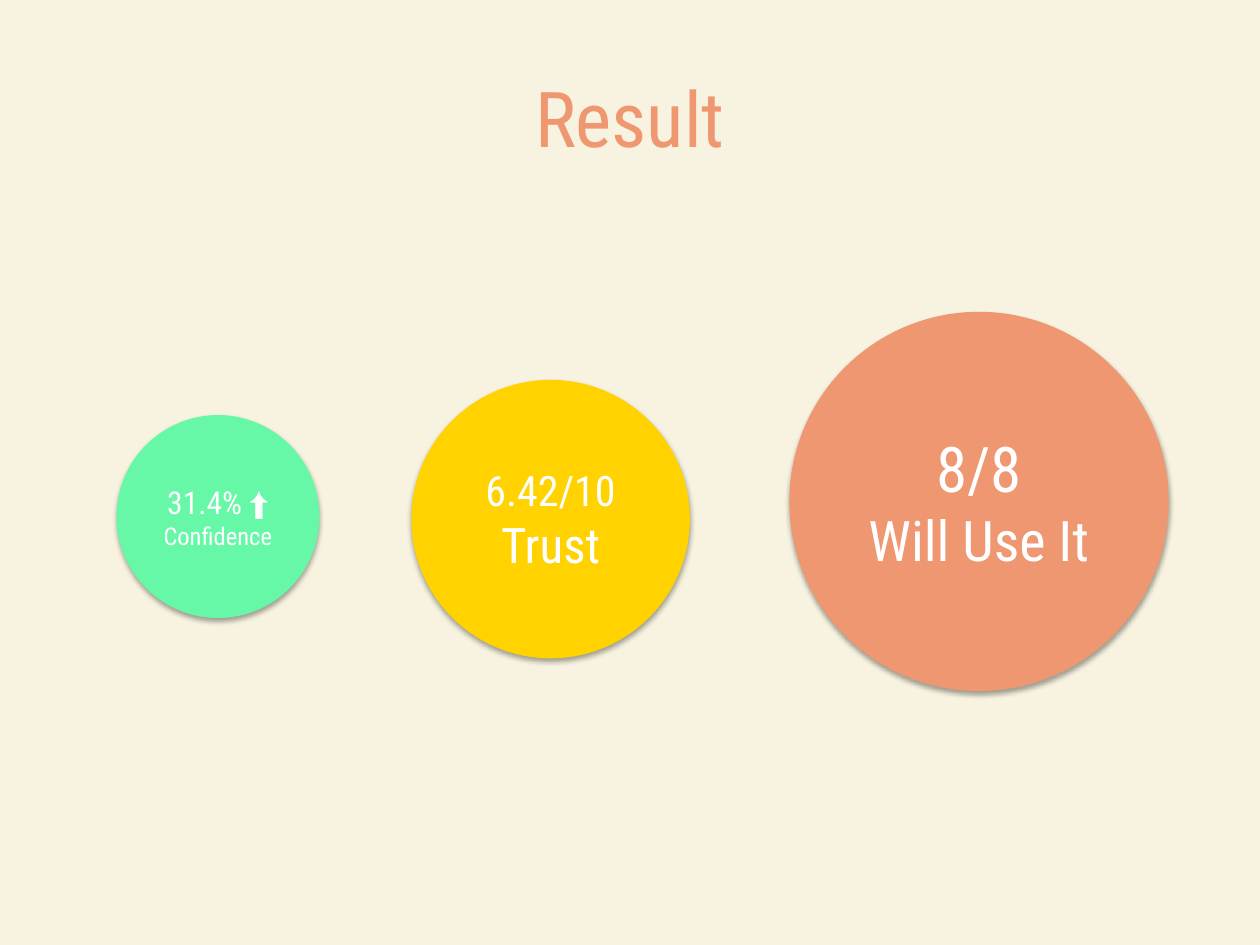
from lxml.etree import SubElement
from pptx import Presentation
from pptx.dml.color import RGBColor
from pptx.enum.shapes import MSO_SHAPE
from pptx.enum.text import MSO_ANCHOR, PP_ALIGN
from pptx.oxml.ns import qn
from pptx.util import Inches, Pt

# Content: each line is (size, [(text, font role), ...])
TITLE = "Result"
RESULTS = [
    {"left": 0.93, "top": 3.3, "diameter": 1.6, "color": "green",
     "lines": [(18, [("31.4% ", "font"), ("⬆", "symbol_font")]),
               (14, [("Confidence", "font")])]},
    {"left": 3.27, "top": 3.02, "diameter": 2.2, "color": "yellow",
     "lines": [(24, [("6.42/10", "font")]), (28, [("Trust", "font")])]},
    {"left": 6.27, "top": 2.48, "diameter": 3, "color": "coral",
     "lines": [(36, [("8/8", "font")]), (32, [("Will Use It", "font")])]},
]

THEME = {
    "font": "Roboto Condensed", "symbol_font": "Arial", "title_size": 44,
    "background": "F7F3E0", "coral": "EF9770", "yellow": "FFD200",
    "green": "66F8A7", "white": "FFFFFF", "shadow": "000000",
}
FRAME_FORMAT = {"word_wrap": True, "vertical_anchor": MSO_ANCHOR.MIDDLE}


def color(name):
    return RGBColor.from_string(THEME[name])


def write_lines(shape, lines, text_color):
    frame = shape.text_frame
    for name, value in FRAME_FORMAT.items():
        setattr(frame, name, value)
    for index, (size, spans) in enumerate(lines):
        para = frame.add_paragraph() if index else frame.paragraphs[0]
        para.alignment = PP_ALIGN.CENTER
        for text, font_role in spans:
            span = para.add_run()
            span.text = text
            font_format = {"name": THEME[font_role], "size": Pt(size)}
            for name, value in font_format.items():
                setattr(span.font, name, value)
            span.font.color.rgb = color(text_color)


def add_soft_shadow(shape):
    shape.shadow.inherit = False
    effects = shape._element.spPr.find(qn("a:effectLst"))
    shadow = SubElement(effects, qn("a:outerShdw"), blurRad=str(Pt(3.1)),
                        dist=str(Pt(1.8)), dir="5400000", rotWithShape="0")
    tint = SubElement(shadow, qn("a:srgbClr"), val=THEME["shadow"])
    SubElement(tint, qn("a:alpha"), val="35000")


def add_circle(page, result):
    diameter = Inches(result["diameter"])
    circle = page.shapes.add_shape(
        MSO_SHAPE.OVAL, Inches(result["left"]), Inches(result["top"]),
        diameter, diameter)
    circle.fill.solid()
    circle.fill.fore_color.rgb = color(result["color"])
    circle.line.color.rgb = color(result["color"])
    circle.line.width = Pt(0.75)
    add_soft_shadow(circle)
    write_lines(circle, result["lines"], "white")


def main():
    deck = Presentation()
    deck.slide_width, deck.slide_height = Inches(10), Inches(7.5)
    page = deck.slides.add_slide(deck.slide_layouts[6])
    page.background.fill.solid()
    page.background.fill.fore_color.rgb = color("background")

    # Title
    box = page.shapes.add_textbox(
        Inches(0.5), Inches(0.3), Inches(9), Inches(1.25))
    write_lines(box, [(THEME["title_size"], [(TITLE, "font")])], "coral")

    # Result circles
    for result in RESULTS:
        add_circle(page, result)

    deck.save("out.pptx")


if __name__ == "__main__":
    main()
